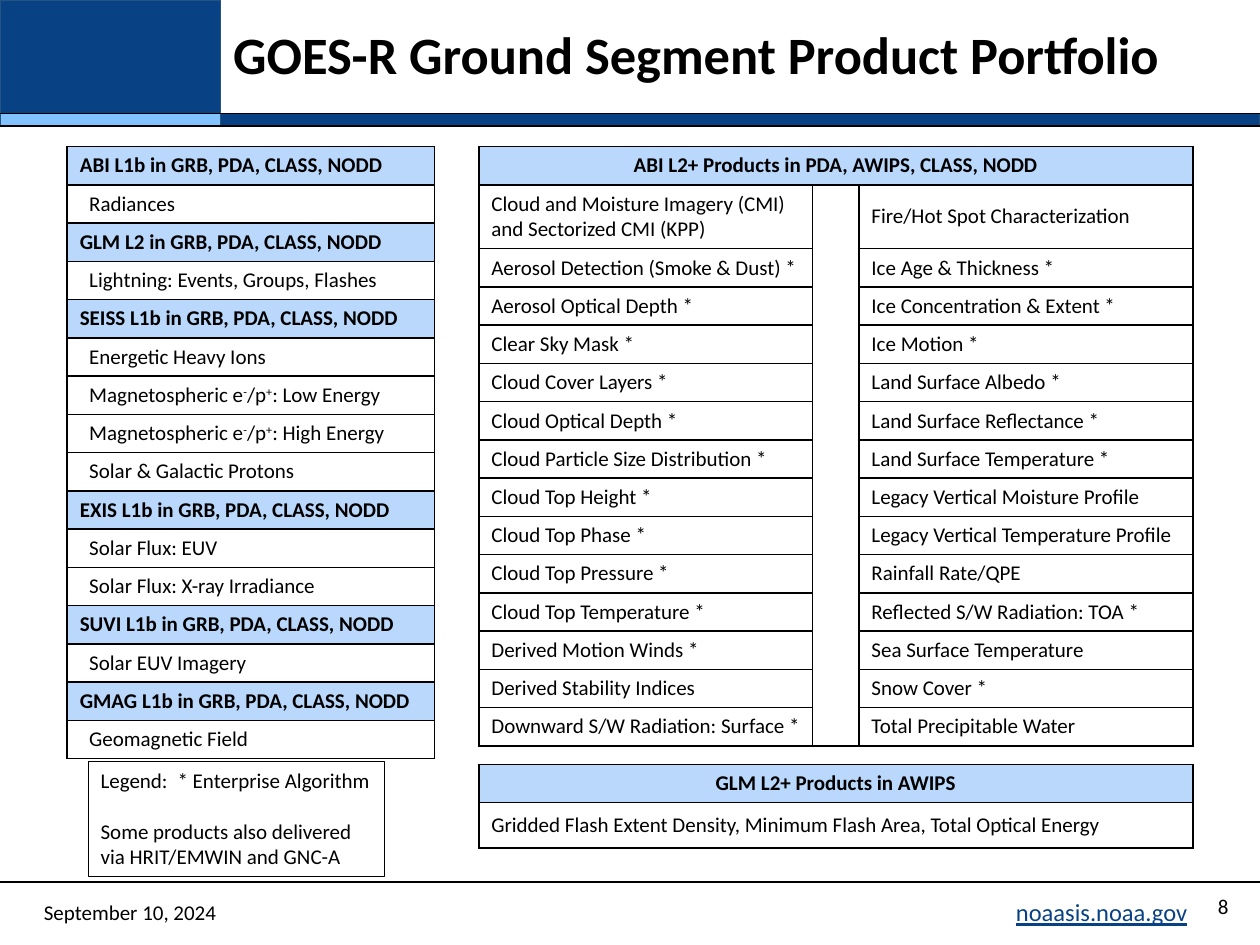
"""Build the GOES-R Ground Segment Product Portfolio slide."""
import pptx
import pptx.util
import pptx.dml.color
import pptx.enum.shapes
import pptx.enum.text
import pptx.oxml
import pptx.oxml.ns
import lxml.etree

Pt = pptx.util.Pt
RGB = pptx.dml.color.RGBColor
ALIGN = pptx.enum.text.PP_ALIGN
MIDDLE = pptx.enum.text.MSO_ANCHOR.MIDDLE
RECT = pptx.enum.shapes.MSO_SHAPE.RECTANGLE
BLACK = RGB(0x00, 0x00, 0x00)
WHITE = RGB(0xFF, 0xFF, 0xFF)
NAVY = RGB(0x08, 0x42, 0x84)
SKY = RGB(0x82, 0xC3, 0xFF)
EDGE = RGB(0x25, 0x53, 0x82)
HEAD = RGB(0xB9, 0xD8, 0xFB)
NS = pptx.oxml.ns.nsdecls("a")
BORDER = (
    '<a:{0} {1} w="12700"><a:solidFill><a:srgbClr val="000000"/></a:solidFill></a:{0}>'
)


def write(para, text, size=12, bold=False, color=BLACK, align=ALIGN.LEFT):
    for i, part in enumerate(text.split("^")):
        run = para.add_run()
        run.text = part
        if i % 2:
            run._r.get_or_add_rPr().set("baseline", "30000")
    para.alignment = align
    font = para.font
    font.name, font.size, font.bold = "Calibri", Pt(size), bold
    font.color.rgb = color


def grid(left, top, widths, heights):
    frame = slide.shapes.add_table(
        len(heights), len(widths), Pt(left), Pt(top), Pt(sum(widths)), Pt(sum(heights))
    )
    table = frame.table
    table.first_row = table.horz_banding = False
    for col, width in zip(table.columns, widths):
        col.width = Pt(width)
    for row, height in zip(table.rows, heights):
        row.height = Pt(height)
    for cell in table.iter_cells():
        props = cell._tc.get_or_add_tcPr()
        for side in ("lnL", "lnR", "lnT", "lnB"):
            props.append(pptx.oxml.parse_xml(BORDER.format(side, NS)))
        cell.vertical_anchor = MIDDLE
        cell.fill.solid()
        cell.fill.fore_color.rgb = WHITE
    return table


deck = pptx.Presentation()
deck.slide_width, deck.slide_height = Pt(720), Pt(540)
slide = deck.slides.add_slide(deck.slide_layouts[5])

bars = [
    (0, 0, 126, 64.8, NAVY),
    (126, 64.8, 594, 7.2, NAVY),
    (0, 64.8, 126, 7.2, SKY),
]
for left, top, width, height, color in bars:
    bar = slide.shapes.add_shape(RECT, Pt(left), Pt(top), Pt(width), Pt(height))
    bar.shadow.inherit = False
    bar.fill.solid()
    bar.fill.fore_color.rgb = color
    bar.line.color.rgb = EDGE
    bar.line.width = Pt(0.75)

for top in (72, 64.8, 504):
    rule = slide.shapes.add_connector(
        pptx.enum.shapes.MSO_CONNECTOR.STRAIGHT, Pt(0), Pt(top), Pt(720), Pt(top)
    )
    rule.line.color.rgb = BLACK
    rule.line.width = Pt(1)
    lxml.etree.SubElement(rule._element.spPr, pptx.oxml.ns.qn("a:effectLst"))

title = slide.shapes.title
title.left, title.top, title.width, title.height = Pt(126), Pt(0.7), Pt(576), Pt(64.8)
title.text_frame.vertical_anchor = MIDDLE
title.text_frame.auto_size = pptx.enum.text.MSO_AUTO_SIZE.NONE
para = title.text_frame.paragraphs[0]
write(para, "GOES-R Ground Segment Product Portfolio", 30, True)
para.line_spacing = 0.9

groups = {
    "ABI L1b": ["Radiances"],
    "GLM L2": ["Lightning: Events, Groups, Flashes"],
    "SEISS L1b": [
        "Energetic Heavy Ions",
        "Magnetospheric e^-^/p^+^: Low Energy",
        "Magnetospheric e^-^/p^+^: High Energy",
        "Solar & Galactic Protons",
    ],
    "EXIS L1b": ["Solar Flux: EUV", "Solar Flux: X-ray Irradiance"],
    "SUVI L1b": ["Solar EUV Imagery"],
    "GMAG L1b": ["Geomagnetic Field"],
}
lines = []
for name, items in groups.items():
    lines.append((f"{name} in GRB, PDA, CLASS, NODD", True))
    lines += [(item, False) for item in items]
table = grid(38.4, 83.8, [210], [21.8] * len(lines))
for i, (text, bold) in enumerate(lines):
    cell = table.cell(i, 0)
    write(cell.text_frame.paragraphs[0], text, bold=bold)
    if bold:
        cell.fill.fore_color.rgb = HEAD
    else:
        cell.margin_left = Pt(12.6)

pairs = [
    ("Cloud and Moisture Imagery (CMI) and Sectorized CMI (KPP)",
     "Fire/Hot Spot Characterization"),
    ("Aerosol Detection (Smoke & Dust) *", "Ice Age & Thickness *"),
    ("Aerosol Optical Depth *", "Ice Concentration & Extent *"),
    ("Clear Sky Mask *", "Ice Motion *"),
    ("Cloud Cover Layers *", "Land Surface Albedo *"),
    ("Cloud Optical Depth *", "Land Surface Reflectance *"),
    ("Cloud Particle Size Distribution *", "Land Surface Temperature *"),
    ("Cloud Top Height *", "Legacy Vertical Moisture Profile"),
    ("Cloud Top Phase *", "Legacy Vertical Temperature Profile"),
    ("Cloud Top Pressure *", "Rainfall Rate/QPE"),
    ("Cloud Top Temperature *", "Reflected S/W Radiation: TOA *"),
    ("Derived Motion Winds *", "Sea Surface Temperature"),
    ("Derived Stability Indices", "Snow Cover *"),
    ("Downward S/W Radiation: Surface *", "Total Precipitable Water"),
]
table = grid(273.6, 83.8, [190.8, 26.4, 190.8], [21.8, 36.5] + [21.8] * 13)
table.cell(0, 0).merge(table.cell(0, 2))
table.cell(1, 1).merge(table.cell(14, 1))
table.cell(1, 1).fill.background()
for i, pair in enumerate(pairs, 1):
    for col, text in zip((0, 2), pair):
        write(table.cell(i, col).text_frame.paragraphs[0], text)

flash = grid(273.6, 436.8, [408], [21.8, 25.9])
write(
    flash.cell(1, 0).text_frame.paragraphs[0],
    "Gridded Flash Extent Density, Minimum Flash Area, Total Optical Energy",
)
heads = [
    (table, "ABI L2+ Products in PDA, AWIPS, CLASS, NODD"),
    (flash, "GLM L2+ Products in AWIPS"),
]
for part, text in heads:
    cell = part.cell(0, 0)
    cell.fill.fore_color.rgb = HEAD
    write(cell.text_frame.paragraphs[0], text, bold=True, align=ALIGN.CENTER)

key = slide.shapes.add_shape(RECT, Pt(50.4), Pt(435.3), Pt(169.2), Pt(65.8))
key.shadow.inherit = False
key.fill.background()
key.line.color.rgb = BLACK
key.line.width = Pt(0.75)
frame = key.text_frame
frame.word_wrap = True
frame.vertical_anchor = pptx.enum.text.MSO_ANCHOR.TOP
para = frame.paragraphs[0]
para._p.get_or_add_pPr().append(
    pptx.oxml.parse_xml(f'<a:tabLst {NS}><a:tab pos="{Pt(44)}" algn="l"/></a:tabLst>')
)
write(para, "Legend:\t* Enterprise Algorithm")
para = frame.add_paragraph()
write(para, "Some products also delivered via HRIT/EMWIN and GNC-A")
para.space_before = Pt(14.6)

notes = [
    (630, 504, 72, 31.7, (0, 0, 0, 3.6), "8", 12, BLACK, ALIGN.RIGHT),
    (18, 506.9, 117.4, 28.8, (7.2, 3.6, 7.2, 3.6), "September 10, 2024", 12, BLACK, ALIGN.LEFT),
    (576.7, 512.6, 105.8, 17.3, (0, 0, 0, 0), "noaasis.noaa.gov", 14, NAVY, ALIGN.CENTER),
]
for left, top, width, height, pads, text, size, color, align in notes:
    box = slide.shapes.add_textbox(Pt(left), Pt(top), Pt(width), Pt(height))
    frame = box.text_frame
    frame.word_wrap = True
    frame.vertical_anchor = MIDDLE
    frame.margin_left, frame.margin_top, frame.margin_right, frame.margin_bottom = map(Pt, pads)
    write(frame.paragraphs[0], text, size, color=color, align=align)
    frame.paragraphs[0].font.underline = color == NAVY

deck.save("out.pptx")
